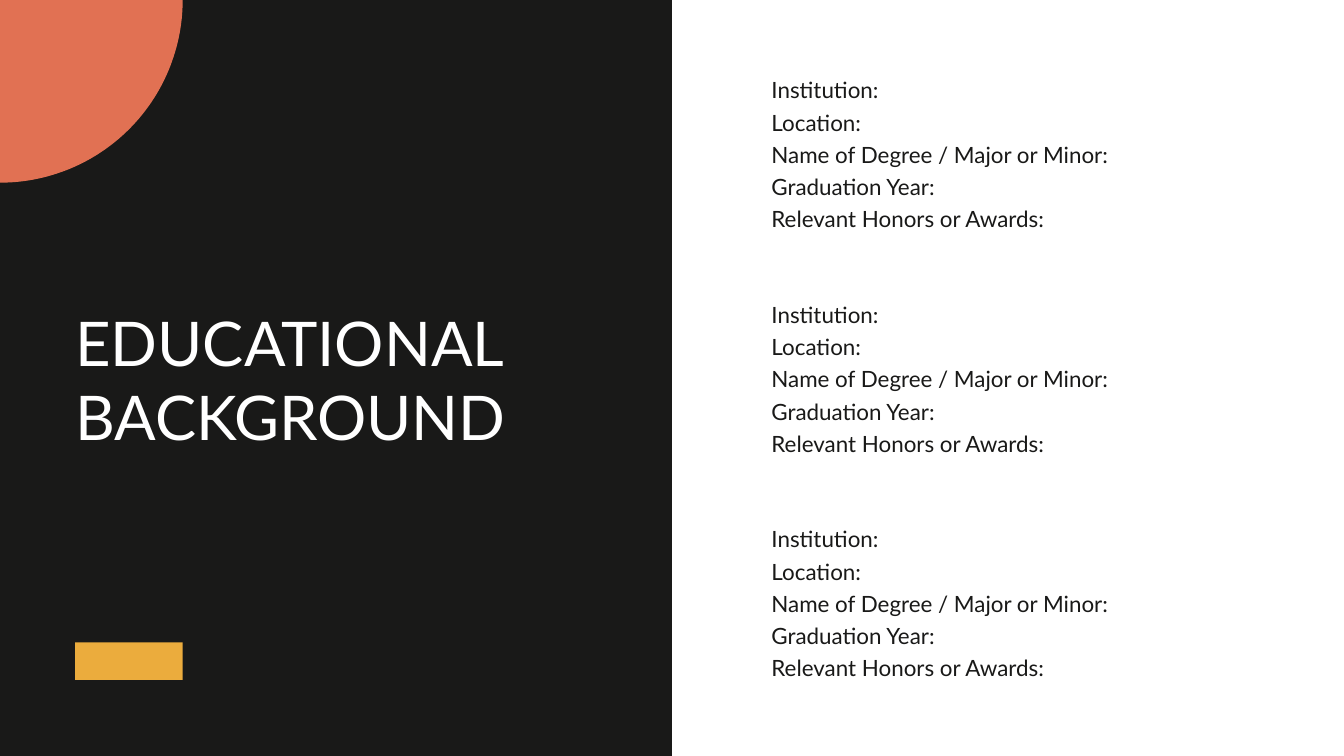
import math

import pptx
import pptx.dml.color
import pptx.enum.shapes
import pptx.enum.text
import pptx.util

Inches = pptx.util.Inches

WIDTH = 10
HEIGHT = WIDTH * 9 / 16
DARK, WHITE, CORAL, GOLD = "191918", "FFFFFF", "E17153", "EBAC3D"
FIELDS = [
    "Institution:",
    "Location:",
    "Name of Degree / Major or Minor:",
    "Graduation Year:",
    "Relevant Honors or Awards:",
]


def color(code):
    return pptx.dml.color.RGBColor.from_string(code)


def write(frame, lines, size=12, ink=DARK, font="Lato", space=None):
    """Fill a text frame with one paragraph per line."""
    for i, line in enumerate(lines):
        para = frame.paragraphs[0] if i == 0 else frame.add_paragraph()
        para.line_spacing = space
        run = para.add_run()
        run.text = line
        run.font.name = font
        run.font.size = pptx.util.Pt(size)
        run.font.color.rgb = color(ink)


class Deck:
    def __init__(self, width, height):
        self.show = pptx.Presentation()
        self.show.slide_width = Inches(width)
        self.show.slide_height = Inches(height)
        self.slide = self.show.slides.add_slide(self.show.slide_layouts[6])
        self.slide.background.fill.solid()
        self.slide.background.fill.fore_color.rgb = color(WHITE)

    def paint(self, shape, fill):
        shape.shadow.inherit = False
        shape.fill.solid()
        shape.fill.fore_color.rgb = color(fill)
        shape.line.fill.background()

    def rect(self, x, y, w, h, fill):
        kind = pptx.enum.shapes.MSO_SHAPE.RECTANGLE
        shape = self.slide.shapes.add_shape(kind, *map(Inches, (x, y, w, h)))
        self.paint(shape, fill)

    def quarter(self, radius, fill, steps=60):
        """Draw a quarter disc centred on the slide's top left corner."""
        turns = [math.pi / 2 * i / steps for i in range(steps + 1)]
        arc = [(Inches(radius * math.cos(t)), Inches(radius * math.sin(t)))
               for t in turns]
        path = self.slide.shapes.build_freeform(0, 0)
        path.add_line_segments(arc, close=True)
        self.paint(path.convert_to_shape(), fill)

    def text(self, x, y, w, h, lines, **style):
        box = self.slide.shapes.add_textbox(*map(Inches, (x, y, w, h)))
        frame = box.text_frame
        frame.margin_left = frame.margin_right = 0
        frame.margin_top = frame.margin_bottom = 0
        frame.word_wrap = True
        frame.auto_size = pptx.enum.text.MSO_AUTO_SIZE.SHAPE_TO_FIT_TEXT
        write(frame, lines, **style)


def main():
    deck = Deck(WIDTH, HEIGHT)
    left = 0.56
    deck.rect(0, 0, WIDTH / 2, HEIGHT, DARK)
    deck.text(left, 2.27, 3.91, 1.11, ["EDUCATIONAL BACKGROUND"],
              size=33, ink=WHITE)
    for i in range(3):
        deck.text(5.74, 0.53 + i * 1.67, 3.51, 1.17, FIELDS, space=1.2)
    deck.rect(left, 4.78, 0.8, 0.28, GOLD)
    deck.quarter(1.36, CORAL)
    deck.show.save("out.pptx")


if __name__ == "__main__":
    main()
